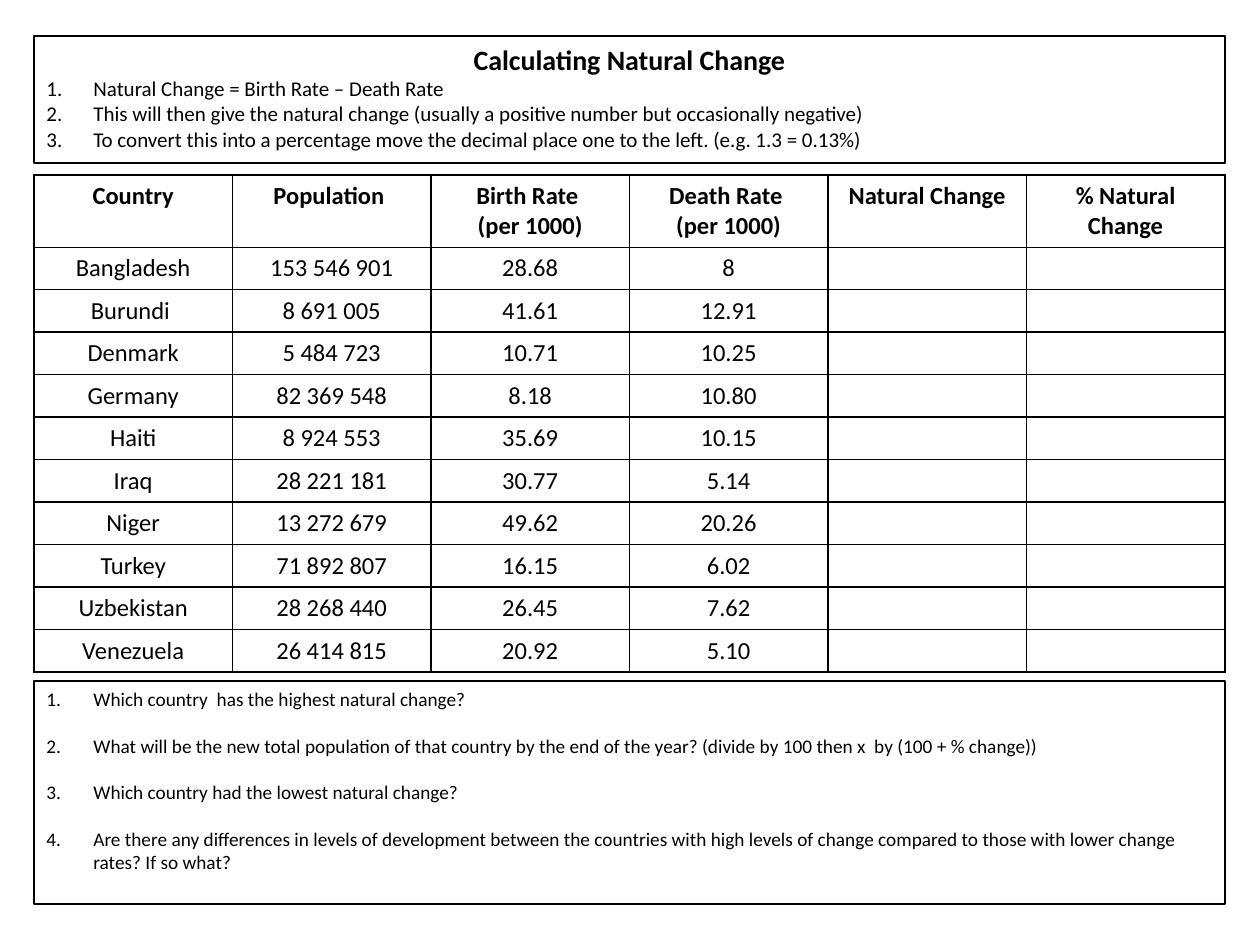
from lxml import etree
from pptx import Presentation
from pptx import util as u
from pptx.dml.color import RGBColor
from pptx.enum import shapes, text
from pptx.oxml.ns import qn

PX = 914400 / 126
FONT = "Calibri"
BLACK = "000000"

HEADINGS = ["Country", "Population ", "Birth Rate \n(per 1000)",
            "Death Rate \n(per 1000)", "Natural Change", "% Natural Change"]
COUNTRIES = [
    ("Bangladesh", "153 546 901", "28.68", "8"),
    ("Burundi ", "8 691 005", "41.61", "12.91"),
    ("Denmark", "5 484 723", "10.71", "10.25"),
    ("Germany", "82 369 548", "8.18", "10.80"),
    ("Haiti", "8 924 553", "35.69", "10.15"),
    ("Iraq", "28 221 181", "30.77", "5.14"),
    ("Niger", "13 272 679", "49.62", "20.26"),
    ("Turkey", "71 892 807", "16.15", "6.02"),
    ("Uzbekistan", "28 268 440", "26.45", "7.62"),
    ("Venezuela", "26 414 815", "20.92", "5.10"),
]
METHOD = [
    "Natural Change = Birth Rate – Death Rate",
    "This will then give the natural change (usually a positive number but occasionally negative)",
    "To convert this into a percentage move the decimal place one to the left. (e.g. 1.3 = 0.13%)",
]
QUESTIONS = [
    "Which country  has the highest natural change?",
    "What will be the new total population of that country by the end of the year? "
    "(divide by 100 then x  by (100 + % change))",
    "Which country had the lowest natural change?",
    "Are there any differences in levels of development between the countries with high "
    "levels of change compared to those with lower change rates? If so what?",
]


def px(length):
    return u.Emu(round(length * PX))


def colour(value):
    return RGBColor.from_string(value)


def style(paragraph, size, bold=False, align=text.PP_ALIGN.LEFT):
    paragraph.alignment = align
    for run in paragraph.runs:
        run.font.name = FONT
        run.font.size = u.Pt(size)
        run.font.bold = bold
        run.font.color.rgb = colour(BLACK)


def number(paragraph):
    properties = paragraph._p.get_or_add_pPr()
    properties.set("marL", str(px(47)))
    properties.set("indent", str(-px(47)))
    etree.SubElement(properties, qn("a:buAutoNum"), type="arabicPeriod")


def outlined_box(slide, box):
    panel = slide.shapes.add_shape(shapes.MSO_SHAPE.RECTANGLE, *map(px, box))
    panel.shadow.inherit = False
    panel.fill.background()
    panel.line.color.rgb = colour(BLACK)
    panel.line.width = u.Pt(0.75)
    panel.text_frame.word_wrap = True
    panel.text_frame.vertical_anchor = text.MSO_ANCHOR.TOP
    return panel.text_frame


def method_box(slide, box):
    frame = outlined_box(slide, box)
    frame.text = "\n".join(["Calculating Natural Change"] + METHOD)
    title, *steps = frame.paragraphs
    style(title, 16, bold=True, align=text.PP_ALIGN.CENTER)
    for step in steps:
        style(step, 12)
        number(step)


def question_box(slide, box):
    frame = outlined_box(slide, box)
    frame.text = "\n".join(QUESTIONS)
    for index, question in enumerate(frame.paragraphs):
        style(question, 11)
        # One line of room for each answer
        question.space_before = u.Pt(13.4 if index else 0)
        number(question)


def border(cell):
    properties = cell._tc.get_or_add_tcPr()
    for side in ("lnL", "lnR", "lnT", "lnB"):
        line = etree.SubElement(properties, qn(f"a:{side}"), w=str(u.Pt(1)))
        fill = etree.SubElement(line, qn("a:solidFill"))
        etree.SubElement(fill, qn("a:srgbClr"), val=BLACK)


def country_table(slide, box, header_height):
    rows = [HEADINGS] + [country + ("", "") for country in COUNTRIES]
    table = slide.shapes.add_table(len(rows), len(HEADINGS), *map(px, box)).table
    table.first_row = table.horz_banding = False
    for column in table.columns:
        column.width = px(box[2] / len(HEADINGS))
    for index, values in enumerate(rows):
        body_height = (box[3] - header_height) / len(COUNTRIES)
        table.rows[index].height = px(body_height if index else header_height)
        for cell, value in zip(table.rows[index].cells, values):
            border(cell)
            cell.fill.background()
            cell.text_frame.text = value
            for paragraph in cell.text_frame.paragraphs:
                style(paragraph, 14, index == 0, text.PP_ALIGN.CENTER)
                if not value:
                    # Keeps empty answer cells at the row's text size
                    etree.SubElement(paragraph._p, qn("a:endParaRPr"), sz="1400")


def main():
    deck = Presentation()
    deck.slide_width, deck.slide_height = px(1260), px(945)
    slide = deck.slides.add_slide(deck.slide_layouts[6])
    left, width = 34, 1191
    country_table(slide, (left, 175, width, 496), 72)
    method_box(slide, (left, 36, width, 127))
    question_box(slide, (left, 681, width, 223))
    deck.save("out.pptx")


if __name__ == "__main__":
    main()
